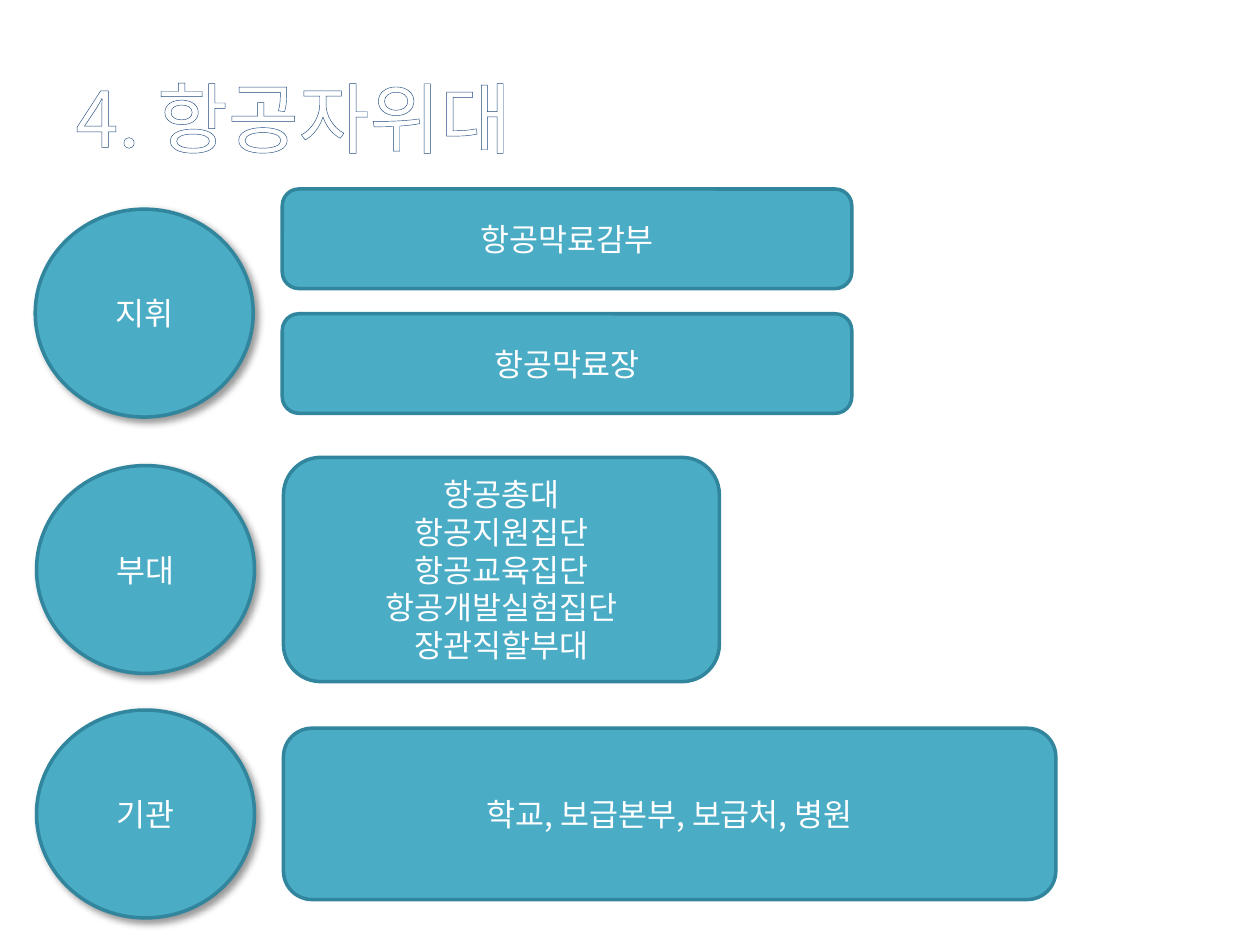
from dataclasses import dataclass

from lxml import etree
from pptx import Presentation
from pptx import util as u
from pptx.dml.color import RGBColor
from pptx.enum import shapes, text
from pptx.oxml import parse_xml
from pptx.oxml.ns import nsdecls, qn

CELL = 0.1
COLUMNS, ROWS = 100, 75
BADGE_WIDTH, BADGE_HEIGHT = 17.3, 16.5
PANEL_OFFSET, PANEL_GAP = 19.6, 2


@dataclass(frozen=True)
class Theme:
    font: str = "Noto Sans CJK KR"
    title_size: float = 44
    body_size: float = 18
    text: str = "FFFFFF"
    title_outline: str = "1F497D"
    title_outline_width: float = 1.45
    fill: str = "4BACC6"
    line: str = "31859C"
    line_width: float = 2
    shadow: str = "000000"


@dataclass(frozen=True)
class Box:
    left: float
    top: float
    width: float
    height: float

    def lengths(self):
        cells = (self.left, self.top, self.width, self.height)
        return [u.Inches(cell * CELL) for cell in cells]


THEME = Theme()


def add_run(paragraph, words, size):
    run = paragraph.add_run()
    run.text = words
    run.font.size = u.Pt(size)
    run.font.name = THEME.font
    run.font.color.rgb = RGBColor.from_string(THEME.text)
    properties = run.font._element
    east_asian = etree.SubElement(properties, qn("a:ea"))
    east_asian.set("typeface", THEME.font)
    return properties


def add_soft_shadow(shape):
    effects = shape._element.spPr.find(qn("a:effectLst"))
    effects.append(parse_xml(
        f'<a:outerShdw {nsdecls("a")} blurRad="{u.Pt(4)}" dist="{u.Pt(3)}" '
        'dir="2700000" algn="tl" rotWithShape="0">'
        f'<a:srgbClr val="{THEME.shadow}"><a:alpha val="40000"/></a:srgbClr>'
        '</a:outerShdw>'))


def add_block(slide, kind, box, lines):
    shape = slide.shapes.add_shape(kind, *box.lengths())
    shape.shadow.inherit = False
    shape.fill.solid()
    shape.fill.fore_color.rgb = RGBColor.from_string(THEME.fill)
    shape.line.color.rgb = RGBColor.from_string(THEME.line)
    shape.line.width = u.Pt(THEME.line_width)
    frame = shape.text_frame
    frame.word_wrap = True
    frame.vertical_anchor = text.MSO_ANCHOR.MIDDLE
    for index, line in enumerate(lines):
        paragraph = frame.paragraphs[0] if index == 0 else frame.add_paragraph()
        paragraph.alignment = text.PP_ALIGN.CENTER
        add_run(paragraph, line, THEME.body_size)
    return shape


def add_title(slide, box, words):
    title = slide.shapes.title
    title.left, title.top, title.width, title.height = box.lengths()
    frame = title.text_frame
    frame.vertical_anchor = text.MSO_ANCHOR.MIDDLE
    paragraph = frame.paragraphs[0]
    paragraph.alignment = text.PP_ALIGN.LEFT
    properties = add_run(paragraph, words, THEME.title_size)
    properties.insert(0, parse_xml(
        f'<a:ln {nsdecls("a")} w="{u.Pt(THEME.title_outline_width)}"><a:solidFill>'
        f'<a:srgbClr val="{THEME.title_outline}"/></a:solidFill></a:ln>'))


def add_band(slide, box, label, panels, badge_shift=0):
    badge_top = box.top + (box.height - BADGE_HEIGHT) / 2 + badge_shift
    badge_box = Box(box.left, badge_top, BADGE_WIDTH, BADGE_HEIGHT)
    badge = add_block(slide, shapes.MSO_SHAPE.OVAL, badge_box, [label])
    add_soft_shadow(badge)
    height = (box.height - PANEL_GAP * (len(panels) - 1)) / len(panels)
    for index, lines in enumerate(panels):
        panel_box = Box(box.left + PANEL_OFFSET,
                        box.top + index * (height + PANEL_GAP),
                        box.width - PANEL_OFFSET, height)
        add_block(slide, shapes.MSO_SHAPE.ROUNDED_RECTANGLE, panel_box, lines)


def main():
    presentation = Presentation()
    presentation.slide_width = u.Inches(COLUMNS * CELL)
    presentation.slide_height = u.Inches(ROWS * CELL)
    slide = presentation.slides.add_slide(presentation.slide_layouts[5])

    add_title(slide, Box(5, 3, 90, 12.5), "4. 항공자위대")
    add_band(slide, Box(2.8, 15, 64.8, 17.8), "지휘",
             [["항공막료감부"], ["항공막료장"]], badge_shift=0.95)
    add_band(slide, Box(2.9, 36.3, 54.2, 17.8), "부대",
             [["항공총대", "항공지원집단", "항공교육집단",
               "항공개발실험집단", "장관직할부대"]])
    add_band(slide, Box(2.9, 57.8, 80.9, 13.6), "기관",
             [["학교, 보급본부, 보급처, 병원"]])

    presentation.save("out.pptx")


if __name__ == "__main__":
    main()
